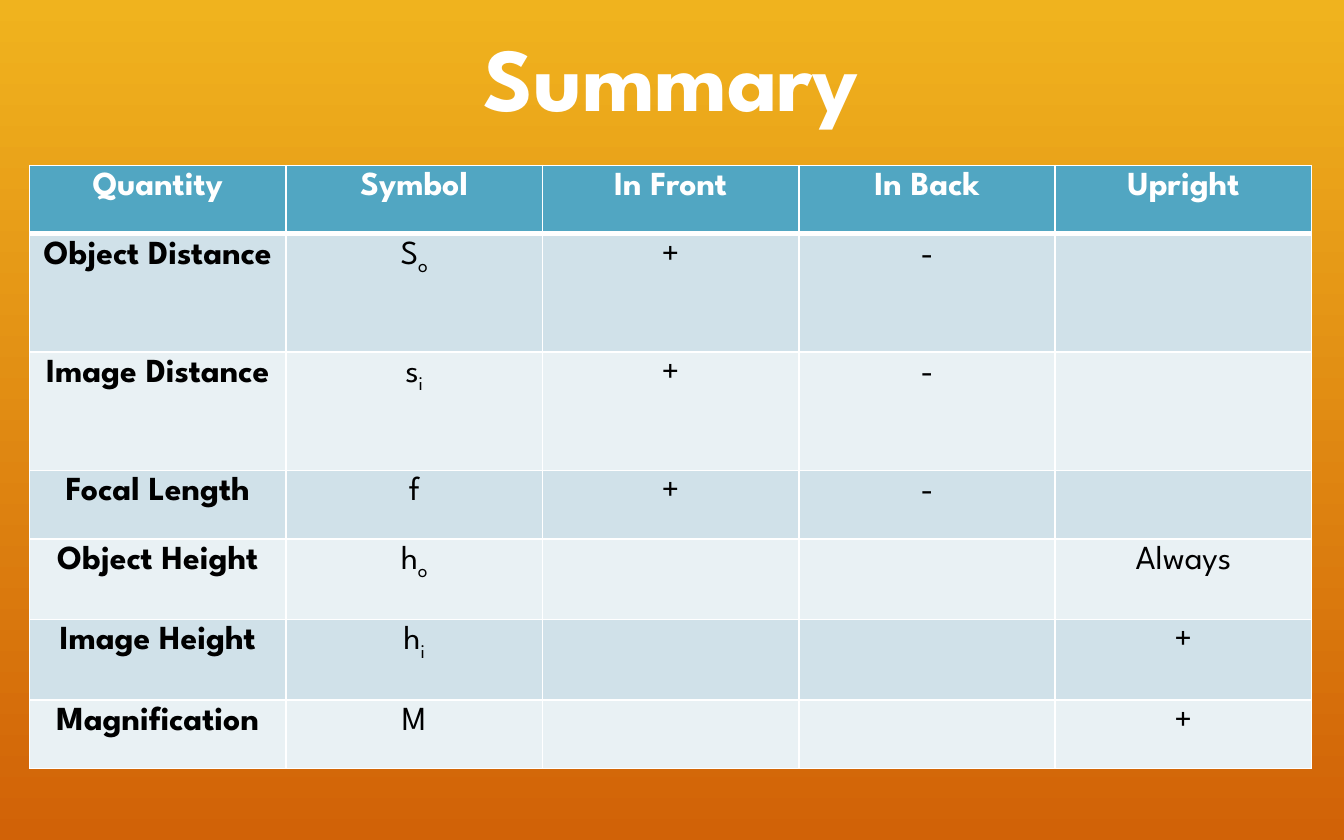
from lxml import etree
from pptx import Presentation
from pptx.dml.color import RGBColor
from pptx.enum.text import MSO_ANCHOR, PP_ALIGN
from pptx.oxml.ns import qn
from pptx.util import Inches, Pt

FONT = "League Spartan"
WHITE, BLACK = "FFFFFF", "000000"
HEADER_FILL = "51A6C2"
BAND_FILLS = ("D0E1E9", "E9F1F4")

HEADINGS = ("Quantity", "Symbol", "In Front", "In Back", "Upright")
# Quantity, symbol, subscript, in front, in back, upright, row height
QUANTITIES = (
    ("Object Distance", "S", "o", "+", "-", "", 0.88),
    ("Image Distance", "s", "i", "+", "-", "", 0.88),
    ("Focal Length", "f", "", "+", "-", "", 0.51),
    ("Object Height", "h", "o", "", "", "Always", 0.6),
    ("Image Height", "h", "i", "", "", "+", 0.6),
    ("Magnification", "M", "", "", "", "+", 0.51),
)
HEADER_HEIGHT = 0.51


def rgb(hex_color):
    return RGBColor.from_string(hex_color)


def add_run(paragraph, text, size, color, bold=False, subscript=False):
    run = paragraph.add_run()
    run.text = text
    font = run.font
    font.name, font.size, font.bold = FONT, Pt(size), bold
    font.color.rgb = rgb(color)
    if subscript:
        run._r.get_or_add_rPr().set("baseline", "-25000")


def add_borders(cell, top=1, bottom=1):
    """Rule all four sides in white, with widths in points."""
    properties = cell._tc.get_or_add_tcPr()
    for side, width in (("L", 1), ("R", 1), ("T", top), ("B", bottom)):
        line = etree.SubElement(properties, qn(f"a:ln{side}"), w=str(Pt(width)))
        fill = etree.SubElement(line, qn("a:solidFill"))
        etree.SubElement(fill, qn("a:srgbClr"), val=WHITE)


def fill_cell(cell, text, fill, color, bold, subscript="", **borders):
    add_borders(cell, **borders)
    cell.fill.solid()
    cell.fill.fore_color.rgb = rgb(fill)
    paragraph = cell.text_frame.paragraphs[0]
    paragraph.alignment = PP_ALIGN.CENTER
    if text:
        add_run(paragraph, text, 18, color, bold)
    if subscript:
        add_run(paragraph, subscript, 18, color, bold, subscript=True)


def paint_background(slide):
    fill = slide.background.fill
    fill.gradient()
    fill.gradient_angle = 270
    for stop, color in zip(fill.gradient_stops, ("F0B31E", "D16207")):
        stop.color.rgb = rgb(color)


def place_title(slide, left, top, width, height):
    title = slide.shapes.title
    title.left, title.top = Inches(left), Inches(top)
    title.width, title.height = Inches(width), Inches(height)
    title.text_frame.vertical_anchor = MSO_ANCHOR.MIDDLE
    paragraph = title.text_frame.paragraphs[0]
    paragraph.alignment = PP_ALIGN.CENTER
    paragraph.line_spacing = 0.95
    add_run(paragraph, "Summary", 48, WHITE, bold=True)


def place_sign_table(slide, left, top, width):
    heights = [HEADER_HEIGHT] + [quantity[-1] for quantity in QUANTITIES]
    table = slide.shapes.add_table(
        len(heights), len(HEADINGS), Inches(left), Inches(top),
        Inches(width), Inches(sum(heights))).table
    for column in table.columns:
        column.width = Inches(width / len(HEADINGS))
    for row, height in zip(table.rows, heights):
        row.height = Inches(height)

    for column, heading in enumerate(HEADINGS):
        fill_cell(table.cell(0, column), heading, HEADER_FILL, WHITE, True, bottom=3)
    for row, (name, symbol, subscript, *signs, _) in enumerate(QUANTITIES, 1):
        fill = BAND_FILLS[(row - 1) % 2]
        for column, text in enumerate((name, symbol, *signs)):
            fill_cell(table.cell(row, column), text, fill, BLACK,
                      bold=column == 0,
                      subscript=subscript if column == 1 else "",
                      top=3 if row == 1 else 1)


def main():
    presentation = Presentation()
    presentation.slide_width = Inches(10)
    presentation.slide_height = Inches(6.25)
    slide = presentation.slides.add_slide(presentation.slide_layouts[5])
    paint_background(slide)
    place_title(slide, 0.85, 0.08, 8.29, 1.04)
    place_sign_table(slide, 0.22, 1.23, 9.54)
    presentation.save("out.pptx")


if __name__ == "__main__":
    main()
